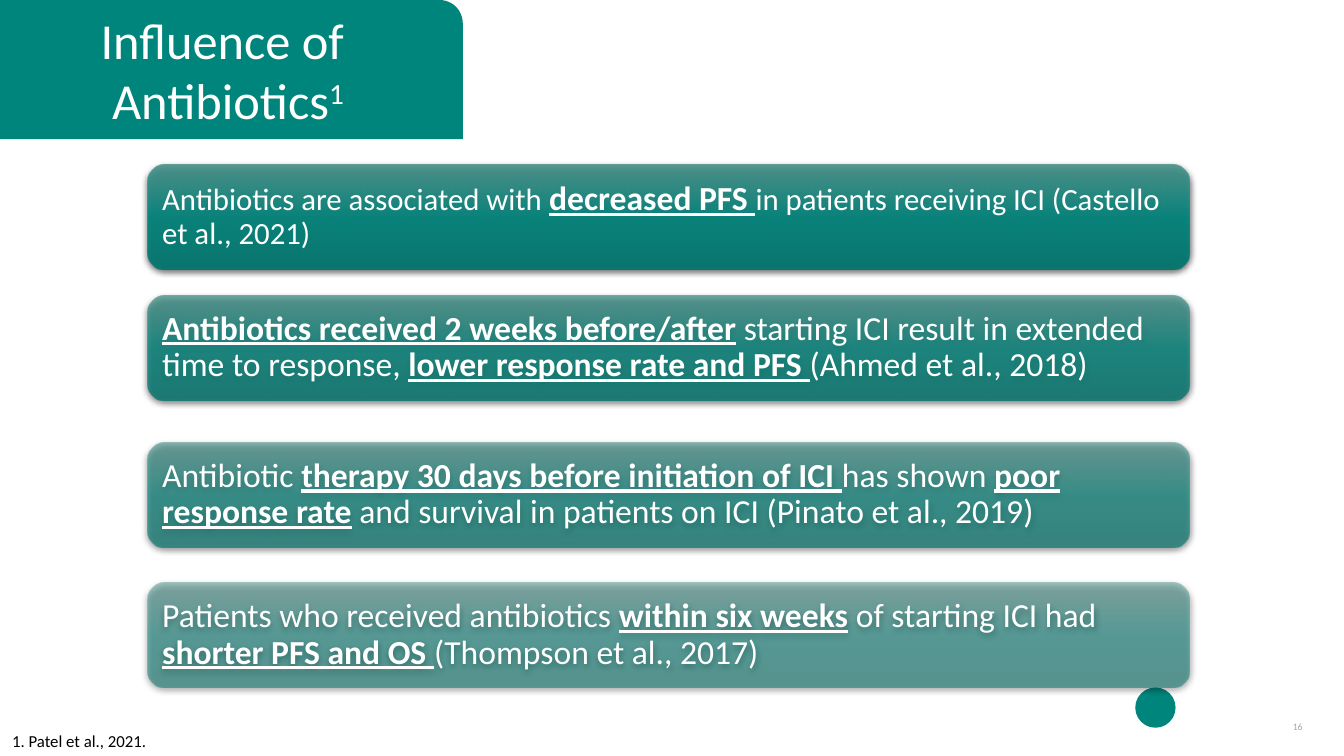
from pptx import Presentation
from pptx.dml.color import RGBColor
from pptx.enum.shapes import MSO_SHAPE as Shape
from pptx.enum.text import MSO_ANCHOR as Anchor, PP_ALIGN as Align
from pptx.oxml import parse_xml
from pptx.oxml.ns import nsdecls
from pptx.util import Inches, Pt

TEAL = RGBColor(0x00, 0x85, 0x7C)
LIGHT_TEAL = RGBColor(0x4B, 0x93, 0x8B)
DARK_TEAL = RGBColor(0x00, 0x76, 0x6E)
WHITE = RGBColor(0xFF, 0xFF, 0xFF)
BLACK = RGBColor(0x00, 0x00, 0x00)
GRAY = RGBColor(0x9E, 0xA7, 0xB3)

FINDINGS = [
    (1.63, 90, 22, "Antibiotics are associated with *decreased PFS *in patients "
                   "receiving ICI (Castello et al., 2021)"),
    (2.93, 77, 24, "*Antibiotics received 2 weeks before/after* starting ICI result in "
                   "extended time to response, *lower response rate and PFS *(Ahmed et al., 2018)"),
    (4.39, 63, 24, "Antibiotic *therapy 30 days before initiation of ICI *has shown "
                   "*poor response rate* and survival in patients on ICI (Pinato et al., 2019)"),
    (5.78, 50, 24, "Patients who received antibiotics *within six weeks* of starting ICI had "
                   "*shorter PFS and OS *(Thompson et al., 2017)"),
]


def write(paragraph, text, size, color=WHITE, align=Align.LEFT, spacing=1.0,
          emphasis_size=24, superscript=False):
    paragraph.alignment = align
    paragraph.line_spacing = spacing
    for index, part in enumerate(text.split("*")):
        if not part:
            continue
        emphasized = index % 2 == 1
        run = paragraph.add_run()
        run.text = part
        font = run.font
        font.name = "Calibri"
        font.size = Pt(emphasis_size if emphasized else size)
        font.bold = font.underline = emphasized
        font.color.rgb = color
        if superscript:
            run._r.get_or_add_rPr().set("baseline", "30000")


class SlideBuilder:
    def __init__(self, presentation):
        self.slide = presentation.slides.add_slide(presentation.slide_layouts[6])

    def frame(self, shape, inset=0.0, anchor=Anchor.TOP):
        frame = shape.text_frame
        frame.word_wrap = True
        frame.vertical_anchor = anchor
        frame.margin_left = frame.margin_right = Inches(inset)
        frame.margin_top = frame.margin_bottom = Inches(inset)
        return frame

    def shape(self, kind, left, top, width, height, color=None):
        shape = self.slide.shapes.add_shape(
            kind, Inches(left), Inches(top), Inches(width), Inches(height))
        shape.line.fill.background()
        shape.shadow.inherit = False
        if color is not None:
            shape.fill.solid()
            shape.fill.fore_color.rgb = color
        return shape

    def title(self, first_line, second_line, reference):
        banner = self.shape(Shape.ROUND_1_RECTANGLE, 0, 0, 4.59, 1.38, TEAL)
        frame = self.frame(banner, 0.05, Anchor.MIDDLE)
        write(frame.paragraphs[0], first_line, 36, align=Align.CENTER)
        paragraph = frame.add_paragraph()
        write(paragraph, second_line, 36, align=Align.CENTER)
        write(paragraph, reference, 36, align=Align.CENTER, superscript=True)

    def card(self, top, opacity, size, text):
        card = self.shape(Shape.ROUNDED_RECTANGLE, 1.46, top, 10.34, 1.04)
        stops = "".join(
            f'<a:gs pos="{position * 1000}"><a:srgbClr val="{color}">'
            f'<a:alpha val="{opacity * 1000}"/></a:srgbClr></a:gs>'
            for position, color in ((0, LIGHT_TEAL), (50, TEAL), (100, DARK_TEAL)))
        gradient = parse_xml(
            f'<a:gradFill {nsdecls("a")} rotWithShape="1"><a:gsLst>{stops}</a:gsLst>'
            '<a:lin ang="5400000" scaled="0"/></a:gradFill>')
        shadow = parse_xml(
            f'<a:outerShdw {nsdecls("a")} blurRad="{Pt(4.5)}" dist="{Pt(1.5)}" '
            f'dir="5400000" rotWithShape="0"><a:srgbClr val="{BLACK}">'
            '<a:alpha val="63000"/></a:srgbClr></a:outerShdw>')
        properties = card._element.spPr
        properties.insert(2, gradient)
        properties[-1].append(shadow)
        frame = self.frame(card, 0.1, Anchor.MIDDLE)
        write(frame.paragraphs[0], text, size, spacing=0.9)

    def footnote(self, text):
        box = self.slide.shapes.add_textbox(
            Inches(0.12), Inches(7.25), Inches(1.63), Inches(0.41))
        write(self.frame(box).paragraphs[0], text, 12, BLACK)

    def slide_number(self, text):
        box = self.shape(Shape.RECTANGLE, 12.67, 7.09, 0.25, 0.24, WHITE)
        frame = self.frame(box, anchor=Anchor.MIDDLE)
        write(frame.paragraphs[0], text, 7, GRAY, Align.RIGHT)


def main():
    presentation = Presentation()
    presentation.slide_width = Inches(13.33)
    presentation.slide_height = Inches(7.5)
    builder = SlideBuilder(presentation)
    builder.shape(Shape.OVAL, 11.26, 6.82, 0.4, 0.4, TEAL)
    builder.slide_number("16")
    builder.title("Influence of ", "Antibiotics", "1")
    for finding in FINDINGS:
        builder.card(*finding)
    builder.footnote("1. Patel et al., 2021.")
    presentation.save("out.pptx")


if __name__ == "__main__":
    main()
